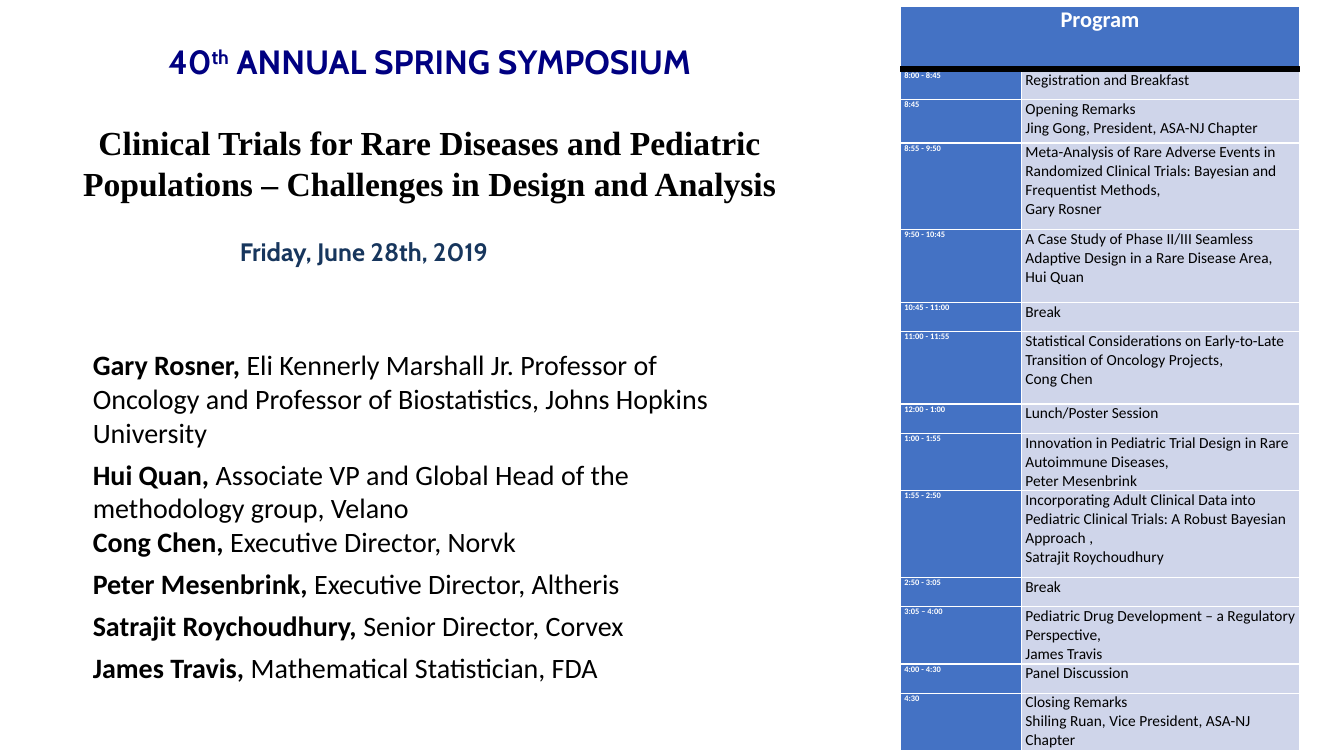
from pptx import Presentation
from pptx.dml.color import RGBColor
from pptx.enum.shapes import MSO_SHAPE
from pptx.enum.text import MSO_ANCHOR, MSO_AUTO_SIZE, PP_ALIGN
from pptx.oxml.ns import qn
from pptx.util import Inches, Pt
from lxml.etree import SubElement

WHITE, BLACK, BLUE, PALE_BLUE = "FFFFFF", "000000", "4472C4", "CFD5EA"
NAVY, DARK_BLUE = "000081", "17365D"

# name, role, space before in points
SPEAKERS = [
    ("Gary Rosner, ", "Eli Kennerly Marshall Jr. Professor of Oncology and "
     "Professor of Biostatistics, Johns Hopkins University", 6),
    ("Hui Quan, ", "Associate VP and Global Head of the methodology group, Velano", 6),
    ("Cong Chen, ", "Executive Director, Norvk", 0),
    ("Peter Mesenbrink, ", "Executive Director, Altheris", 6),
    ("Satrajit Roychoudhury, ", "Senior Director, Corvex", 6),
    ("James Travis, ", "Mathematical Statistician, FDA", 6),
]

# time, lines of the entry, row height in inches
PROGRAM = [
    ("8:00 - 8:45", ["Registration and Breakfast"], 0.29),
    ("8:45", ["Opening Remarks", "Jing Gong, President, ASA-NJ Chapter"], 0.43),
    ("8:55 - 9:50", ["Meta-Analysis of Rare Adverse Events in Randomized Clinical "
                     "Trials: Bayesian and Frequentist Methods,", "Gary Rosner"], 0.86),
    ("9:50 - 10:45", ["A Case Study of Phase II/III Seamless Adaptive Design in a "
                      "Rare Disease Area,", "Hui Quan"], 0.72),
    ("10:45 - 11:00", ["Break"], 0.29),
    ("11:00 - 11:55", ["Statistical Considerations on Early-to-Late Transition of "
                       "Oncology Projects,", "Cong Chen"], 0.72),
    ("12:00 - 1:00", ["Lunch/Poster Session"], 0.29),
    ("1:00 - 1:55", ["Innovation in Pediatric Trial Design in Rare Autoimmune "
                     "Diseases,", "Peter Mesenbrink"], 0.57),
    ("1:55 - 2:50", ["Incorporating Adult Clinical Data into Pediatric Clinical "
                     "Trials: A Robust Bayesian Approach ,", "Satrajit Roychoudhury"], 0.86),
    ("2:50 - 3:05", ["Break"], 0.29),
    ("3:05 – 4:00", ["Pediatric Drug Development – a Regulatory Perspective,",
                     "James Travis"], 0.57),
    ("4:00 - 4:30", ["Panel Discussion"], 0.29),
    ("4:30", ["Closing Remarks", "Shiling Ruan, Vice President, ASA-NJ Chapter"], 0.57),
]
HEADER_HEIGHT = 0.64


def rgb(hex_color):
    return RGBColor.from_string(hex_color)


def set_font(font, name, size, color, bold=None):
    font.name, font.size, font.bold = name, Pt(size), bold
    font.color.rgb = rgb(color)


def place(shape, left, top, width, height):
    shape.left, shape.top = Inches(left), Inches(top)
    shape.width, shape.height = Inches(width), Inches(height)


def prepare_frame(frame):
    frame.word_wrap = True
    frame.auto_size = MSO_AUTO_SIZE.NONE
    frame.vertical_anchor = MSO_ANCHOR.TOP


def add_heading(slide):
    heading = slide.shapes.title
    place(heading, 0, 0.36, 8.52, 1.72)
    frame = heading.text_frame
    prepare_frame(frame)

    event = frame.paragraphs[0]
    event.alignment = PP_ALIGN.CENTER
    set_font(event.font, "Cabin", 24, NAVY, True)
    for text in ("40", "th", " ANNUAL SPRING SYMPOSIUM"):
        run = event.add_run()
        run.text = text
        if text == "th":
            run.font._element.set("baseline", "30000")

    topic = frame.add_paragraph()
    topic.text = ("Clinical Trials for Rare Diseases and Pediatric Populations "
                  "– Challenges in Design and Analysis")
    topic.alignment = PP_ALIGN.CENTER
    topic.space_before = Pt(29)
    set_font(topic.font, "Times New Roman", 24, BLACK, True)


def add_date(slide):
    date_box = slide.shapes.add_textbox(Inches(2.28), Inches(2.3), Inches(3.23), Inches(0.4))
    prepare_frame(date_box.text_frame)
    date = date_box.text_frame.paragraphs[0]
    date.text = "Friday, June 28th, 2019"
    set_font(date.font, "Cabin", 18, DARK_BLUE, True)


def add_speakers(slide):
    body = slide.placeholders[1]
    place(body, 0.82, 3.4, 6.77, 4.04)
    frame = body.text_frame
    prepare_frame(frame)
    for i, (name, role, gap) in enumerate(SPEAKERS):
        speaker = frame.add_paragraph() if i else frame.paragraphs[0]
        speaker.space_before = Pt(gap)
        set_font(speaker.font, "Calibri", 20, BLACK)
        properties = speaker._p.get_or_add_pPr()
        properties.set("marL", "0")
        properties.set("indent", "0")
        properties.insert_element_before(
            properties.makeelement(qn("a:buNone"), {}), "a:tabLst", "a:defRPr", "a:extLst")
        for text, bold in ((name, True), (role, False)):
            run = speaker.add_run()
            run.text = text
            run.font.bold = bold


def set_borders(cell, bottom=1):
    properties = cell._tc.get_or_add_tcPr()
    for side, width in (("L", 1), ("R", 1), ("T", 1), ("B", bottom)):
        line = SubElement(properties, qn(f"a:ln{side}"), w=str(Pt(width)))
        SubElement(SubElement(line, qn("a:solidFill")), qn("a:srgbClr"), val=WHITE)


def fill_cell(cell, lines, fill, size, color, bold, align=PP_ALIGN.LEFT, bottom=1):
    set_borders(cell, bottom)
    cell.fill.solid()
    cell.fill.fore_color.rgb = rgb(fill)
    cell.margin_left = cell.margin_right = Inches(0.04)
    cell.margin_top = cell.margin_bottom = 0
    cell.text = "\n".join(lines)
    for paragraph in cell.text_frame.paragraphs:
        paragraph.alignment = align
        set_font(paragraph.font, "Calibri", size, color, bold)


def add_program(slide):
    heights = [HEADER_HEIGHT] + [height for _, _, height in PROGRAM]
    program = slide.shapes.add_table(
        len(heights), 2, Inches(8.93), Inches(0.06), Inches(3.96), Inches(sum(heights))).table
    for column, width in zip(program.columns, (1.2, 2.76)):
        column.width = Inches(width)
    for row, height in zip(program.rows, heights):
        row.height = Inches(height)

    header = program.cell(0, 0)
    header.merge(program.cell(0, 1))
    fill_cell(header, ["Program"], BLUE, 16, WHITE, True, PP_ALIGN.CENTER, bottom=3)
    for i, (time, entry, _) in enumerate(PROGRAM, start=1):
        fill_cell(program.cell(i, 0), [time], BLUE, 6, WHITE, True)
        fill_cell(program.cell(i, 1), entry, PALE_BLUE, 11, BLACK, False)


def add_header_rule(slide):
    rule = slide.shapes.add_shape(
        MSO_SHAPE.RECTANGLE, Inches(8.93), Inches(0.66), Inches(3.96), Inches(0.05))
    rule.shadow.inherit = False
    rule.fill.solid()
    rule.fill.fore_color.rgb = rgb(BLACK)
    rule.line.color.rgb = rgb(BLACK)
    rule.line.width = Pt(0.75)


def main():
    prs = Presentation()
    prs.slide_width, prs.slide_height = Inches(13.33), Inches(7.5)
    slide = prs.slides.add_slide(prs.slide_layouts[1])
    add_heading(slide)
    add_date(slide)
    add_speakers(slide)
    add_program(slide)
    add_header_rule(slide)
    prs.save("out.pptx")


if __name__ == "__main__":
    main()
